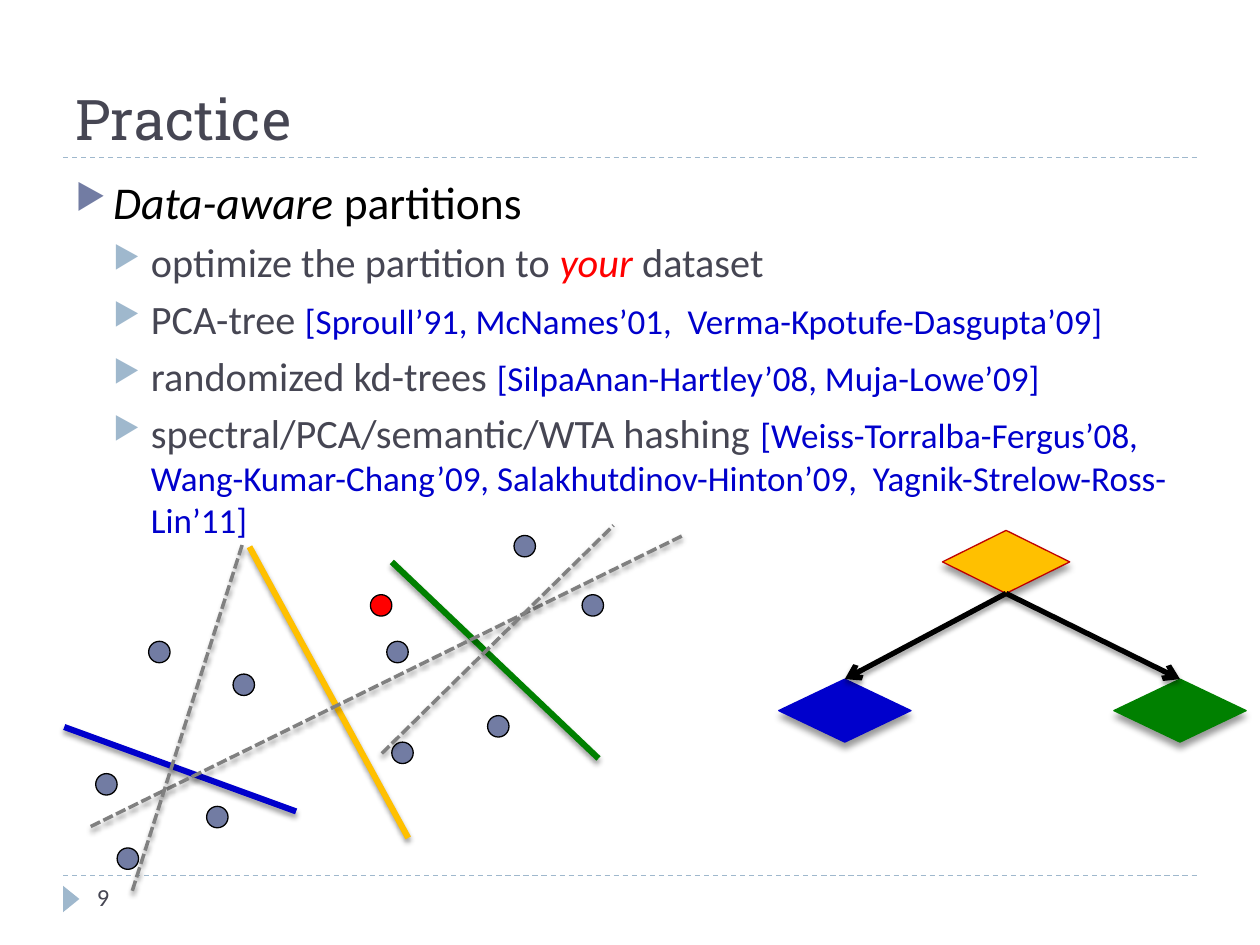
from lxml import etree
from pptx import Presentation
from pptx.dml.color import RGBColor
from pptx.enum.dml import MSO_LINE
from pptx.enum.shapes import MSO_CONNECTOR, MSO_SHAPE
from pptx.enum.text import MSO_ANCHOR
from pptx.oxml.ns import qn
from pptx.util import Inches, Pt

STRAIGHT = MSO_CONNECTOR.STRAIGHT
OVAL, DIAMOND, TRIANGLE = MSO_SHAPE.OVAL, MSO_SHAPE.DIAMOND, MSO_SHAPE.ISOSCELES_TRIANGLE
DASH, SHORT_DASH = MSO_LINE.DASH, MSO_LINE.SQUARE_DOT
BOTTOM, TOP = MSO_ANCHOR.BOTTOM, MSO_ANCHOR.TOP
TOP_SITE, BOTTOM_SITE = 0, 2

COLORS = {
    "ink": "464653", "black": "000000", "red": "FF0000", "blue": "0000CC",
    "green": "008000", "amber": "FFC000", "brick": "C00000", "gray": "808080",
    "slate": "727CA3", "sky": "9FB8CD",
}
HEAD_FONT, BODY_FONT = "Roboto Slab", "Calibri"
DOT_SIZE = 0.17

# Each item: level, runs of (text, size, colour, italic)
BULLETS = [
    (0, [("Data-aware ", 26, "black", True), ("partitions", 26, "black", False)]),
    (1, [("optimize the partition to ", 23, "ink", False), ("your ", 23, "red", True),
         ("dataset", 23, "ink", False)]),
    (1, [("PCA-tree ", 23, "ink", False),
         ("[Sproull’91, McNames’01,  Verma-Kpotufe-Dasgupta’09]", 20, "blue", False)]),
    (1, [("randomized kd-trees ", 23, "ink", False),
         ("[SilpaAnan-Hartley’08, Muja-Lowe’09]", 20, "blue", False)]),
    (1, [("spectral/PCA/semantic/WTA hashing ", 23, "ink", False),
         ("[Weiss-Torralba-Fergus’08, Wang-Kumar-Chang’09, Salakhutdinov-Hinton’09,  "
          "Yagnik-Strelow-Ross-Lin’11]", 20, "blue", False)]),
]
LEVELS = [(6, "slate"), (5, "sky")]  # space before, bullet colour

POINTS = [(1.18, 5.09), (1.85, 5.35), (4.08, 4.25), (1.64, 6.4), (0.76, 6.14),
          (4.62, 4.72), (3.07, 5.09), (0.93, 6.73), (3.11, 5.89), (3.87, 5.68)]
QUERY = (2.94, 4.72)
SPLITS = [((1.98, 4.34), (3.24, 6.65), "amber"), ((3.11, 4.46), (4.75, 6.02), "green"),
          ((0.51, 5.77), (2.35, 6.44), "blue")]
CANDIDATES = [((0.72, 6.56), (5.42, 4.25)), ((1.05, 7.07), (1.93, 4.3)),
              ((3.03, 5.98), (4.87, 4.17))]


def rgb(name):
    return RGBColor.from_string(COLORS[name])


def add_child(parent, tag, **attrs):
    return etree.SubElement(parent, qn(tag), {k: str(v) for k, v in attrs.items()})


def add_shadow(effects, blur, dist):
    """Fill an effect list with a downward shadow; blur and dist in points."""
    outer = add_child(effects, "a:outerShdw", blurRad=Pt(blur), dist=Pt(dist),
                      dir=5400000, rotWithShape=0)
    add_child(add_child(outer, "a:srgbClr", val=COLORS["black"]), "a:alpha", val=40000)


class SlideBuilder:
    def __init__(self, slide):
        self.slide = slide
        self.shapes = slide.shapes

    def text(self, x, y, w, h, anchor=TOP):
        tf = self.shapes.add_textbox(Inches(x), Inches(y), Inches(w), Inches(h)).text_frame
        tf.word_wrap = True
        tf.vertical_anchor = anchor
        return tf

    def run(self, p, text, size, color, italic=False, font=BODY_FONT):
        r = p.add_run()
        r.text = text
        r.font.name, r.font.size, r.font.italic = font, Pt(size), italic
        r.font.color.rgb = rgb(color)

    def bullets(self, tf, items):
        for i, (level, runs) in enumerate(items):
            p = tf.add_paragraph() if i else tf.paragraphs[0]
            before, color = LEVELS[level]
            p.level = level
            p.space_before = Pt(before)
            ppr = p._p.get_or_add_pPr()
            ppr.set("marL", str(Inches(0.3 * (level + 1))))
            ppr.set("indent", str(Inches(-0.3)))
            add_child(add_child(ppr, "a:buClr"), "a:srgbClr", val=COLORS[color])
            add_child(ppr, "a:buSzPct", val=76000)
            add_child(ppr, "a:buChar", char="▶")
            for run in runs:
                self.run(p, *run)

    def shape(self, kind, x, y, w, h, fill, line=None, shadow=False):
        sp = self.shapes.add_shape(kind, Inches(x), Inches(y), Inches(w), Inches(h))
        sp.fill.solid()
        sp.fill.fore_color.rgb = rgb(fill)
        if line:
            sp.line.color.rgb = rgb(line)
            sp.line.width = Pt(0.75)
        else:
            sp.line.fill.background()
        sp.shadow.inherit = False
        if shadow:
            add_shadow(sp._element.spPr.find(qn("a:effectLst")), 4, 3.4)
        return sp

    def dot(self, x, y, fill):
        self.shape(OVAL, x, y, DOT_SIZE, DOT_SIZE, fill, "black")

    def line(self, start, end, color, width, dash=None, shadow=True):
        cx = self.shapes.add_connector(STRAIGHT, *map(Inches, (*start, *end)))
        cx.line.color.rgb = rgb(color)
        cx.line.width = Pt(width)
        if dash:
            cx.line.dash_style = dash
        effects = add_child(cx._element.spPr, "a:effectLst")
        if shadow:
            add_shadow(effects, 3, 2)
        return cx

    def branch(self, parent, child):
        cx = self.line((0, 0), (1, 1), "black", 3)
        cx.begin_connect(parent, BOTTOM_SITE)
        cx.end_connect(child, TOP_SITE)
        add_child(cx.line._get_or_add_ln(), "a:tailEnd", type="arrow")


def main():
    prs = Presentation()
    prs.slide_width, prs.slide_height = Inches(10), Inches(7.5)
    s = SlideBuilder(prs.slides.add_slide(prs.slide_layouts[6]))

    for y in (6.95, 1.25):
        s.line((0.5, y), (9.5, y), "sky", 0.75, DASH, shadow=False)
    s.shape(TRIANGLE, 0.46, 7.07, 0.21, 0.13, "sky").rotation = 90

    title = s.text(0.5, 0.17, 9, 1.08, BOTTOM)
    s.run(title.paragraphs[0], "Practice", 32, "ink", font=HEAD_FONT)
    s.bullets(s.text(0.5, 1.33, 9, 5.4), BULLETS)
    s.run(s.text(0.67, 6.95, 2.17, 0.4).paragraphs[0], "9", 14, "ink")

    for x, y in POINTS:
        s.dot(x, y, "slate")
    for start, end, color in SPLITS:
        s.line(start, end, color, 3.5)
    s.dot(*QUERY, "red")
    for start, end in CANDIDATES:
        s.line(start, end, "gray", 2, SHORT_DASH)

    root = s.shape(DIAMOND, 7.48, 4.21, 1.01, 0.5, "amber", "brick", shadow=True)
    for x, color in ((6.18, "blue"), (8.84, "green")):
        child = s.shape(DIAMOND, x, 5.39, 1.05, 0.5, color, color, shadow=True)
        s.branch(root, child)

    prs.save("out.pptx")


if __name__ == "__main__":
    main()
